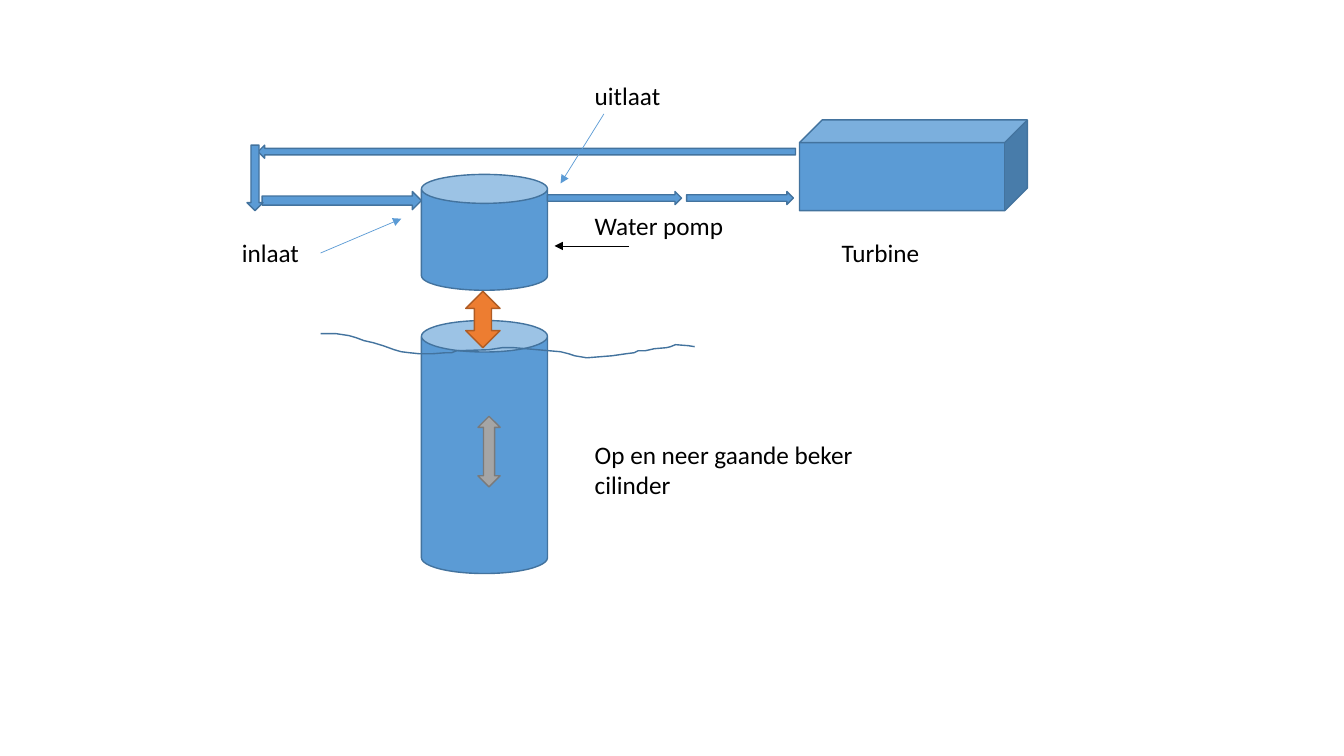
from pptx import Presentation
from pptx.dml.color import RGBColor
from pptx.enum.shapes import MSO_CONNECTOR, MSO_SHAPE
from pptx.oxml.ns import qn
from pptx.util import Inches, Pt
from lxml.etree import SubElement

BLUE, BLUE_EDGE = "5B9BD5", "43739E"
ORANGE, ORANGE_EDGE = "ED7D31", "AF5C24"
GREY, GREY_EDGE = "A5A5A5", "7A7A7A"
BLACK = "000000"

# Water surface, as offsets from its left end
WAVE = [(0, 0), (0.15, 0), (0.28, 0.02), (0.35, 0.04), (0.43, 0.07),
        (0.52, 0.09), (0.62, 0.12), (0.73, 0.16), (0.8, 0.18), (0.88, 0.19),
        (0.98, 0.2), (1.11, 0.2), (1.24, 0.19), (1.3, 0.19), (1.35, 0.17),
        (1.67, 0.16), (1.8, 0.14), (1.92, 0.14), (2.38, 0.18), (2.46, 0.2),
        (2.52, 0.22), (2.64, 0.24), (2.89, 0.22), (3.03, 0.2), (3.11, 0.19),
        (3.15, 0.17), (3.22, 0.17), (3.31, 0.15), (3.43, 0.14), (3.47, 0.13),
        (3.52, 0.11), (3.65, 0.12), (3.71, 0.13)]


def rgb(color):
    return RGBColor.from_string(color)


def add_solid(s, kind, left, top, width, height, fill=BLUE, edge=BLUE_EDGE):
    sp = s.shapes.add_shape(kind, Inches(left), Inches(top), Inches(width), Inches(height))
    sp.shadow.inherit = False
    sp.fill.solid()
    sp.fill.fore_color.rgb = rgb(fill)
    sp.line.color.rgb = rgb(edge)
    sp.line.width = Pt(1)
    return sp


def add_label(s, text, left, top, width, height=0.4, size=18, font="Calibri", color=BLACK):
    tf = s.shapes.add_textbox(Inches(left), Inches(top), Inches(width), Inches(height)).text_frame
    tf.word_wrap = True
    r = tf.paragraphs[0].add_run()
    r.text = text
    r.font.size, r.font.name = Pt(size), font
    r.font.color.rgb = rgb(color)


def add_pointer(s, start, end, color=BLUE):
    line = s.shapes.add_connector(MSO_CONNECTOR.STRAIGHT, *map(Inches, start + end))
    line.line.color.rgb = rgb(color)
    line.line.width = Pt(0.5)
    SubElement(line.line._get_or_add_ln(), qn("a:tailEnd"), type="triangle")
    SubElement(line._element.spPr, qn("a:effectLst"))


def add_pump(s, left, top, width):
    # Beaker cylinder below, water pump above, joined by the moving rod
    add_solid(s, MSO_SHAPE.CAN, left, top + 1.45, width, 2.51)
    add_solid(s, MSO_SHAPE.CAN, left, top, width, 1.15)
    add_solid(s, MSO_SHAPE.UP_DOWN_ARROW, left + 0.44, top + 1.16, 0.34, 0.56, ORANGE, ORANGE_EDGE)
    add_solid(s, MSO_SHAPE.UP_DOWN_ARROW, left + 0.56, top + 2.4, 0.22, 0.7, GREY, GREY_EDGE)


def add_water_surface(s, left, top):
    points = [(Inches(left + x), Inches(top + y)) for x, y in WAVE]
    builder = s.shapes.build_freeform(*points[0])
    builder.add_line_segments(points[1:], close=False)
    sp = builder.convert_to_shape()
    sp.shadow.inherit = False
    sp.fill.background()
    sp.line.color.rgb = rgb(BLUE_EDGE)
    sp.line.width = Pt(1)


def add_circuit(s, left, top):
    # Supply to the turbine, return flow and inlet
    add_solid(s, MSO_SHAPE.RIGHT_ARROW, left + 2.98, top + 0.71, 1.33, 0.13)
    add_solid(s, MSO_SHAPE.RIGHT_ARROW, left + 0.15, top + 0.71, 1.58, 0.18)
    add_solid(s, MSO_SHAPE.CUBE, left + 5.48, top, 2.26, 0.9)
    add_solid(s, MSO_SHAPE.RIGHT_ARROW, left + 4.36, top + 0.71, 1.06, 0.13)
    add_solid(s, MSO_SHAPE.LEFT_ARROW, left + 0.11, top + 0.25, 5.33, 0.13)
    add_solid(s, MSO_SHAPE.DOWN_ARROW, left, top + 0.25, 0.16, 0.65)


def add_labels(s, left, top):
    # The middle labels share one left edge
    middle = left + 3.5
    add_label(s, "uitlaat", middle, top, 1.47)
    add_label(s, "Water pomp", middle, top + 1.29, 1.83)
    add_label(s, "Op en neer gaande beker cilinder", middle, top + 3.56, 3.28, 0.71)
    add_label(s, "inlaat", left, top + 1.56, 1.4)
    add_label(s, "Turbine", left + 5.95, top + 1.56, 2.84)
    # Pointers from labels to parts
    add_pointer(s, (middle + 0.44, top + 1.69), (middle - 0.3, top + 1.69), BLACK)
    add_pointer(s, (middle + 0.19, top + 0.38), (middle - 0.24, top + 1.07))
    add_pointer(s, (left + 0.88, top + 1.76), (left + 1.68, top + 1.42))


def main():
    prs = Presentation()
    prs.slide_width, prs.slide_height = Inches(13.33), Inches(7.5)
    s = prs.slides.add_slide(prs.slide_layouts[6])
    add_pump(s, 4.18, 1.73, 1.25)
    add_water_surface(s, 3.18, 3.31)
    add_circuit(s, 2.45, 1.19)
    add_labels(s, 2.3, 0.75)
    prs.save("out.pptx")


if __name__ == "__main__":
    main()
